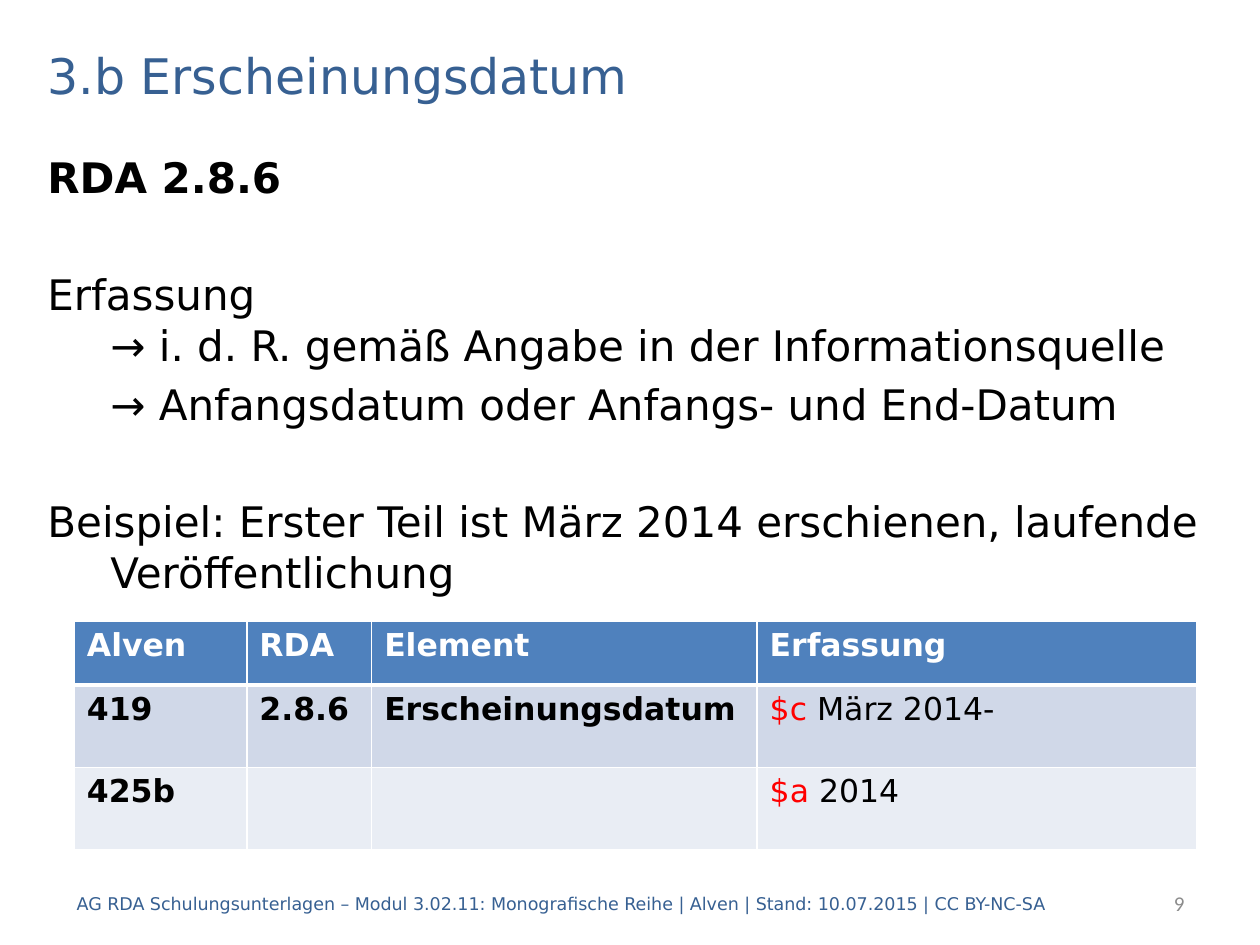
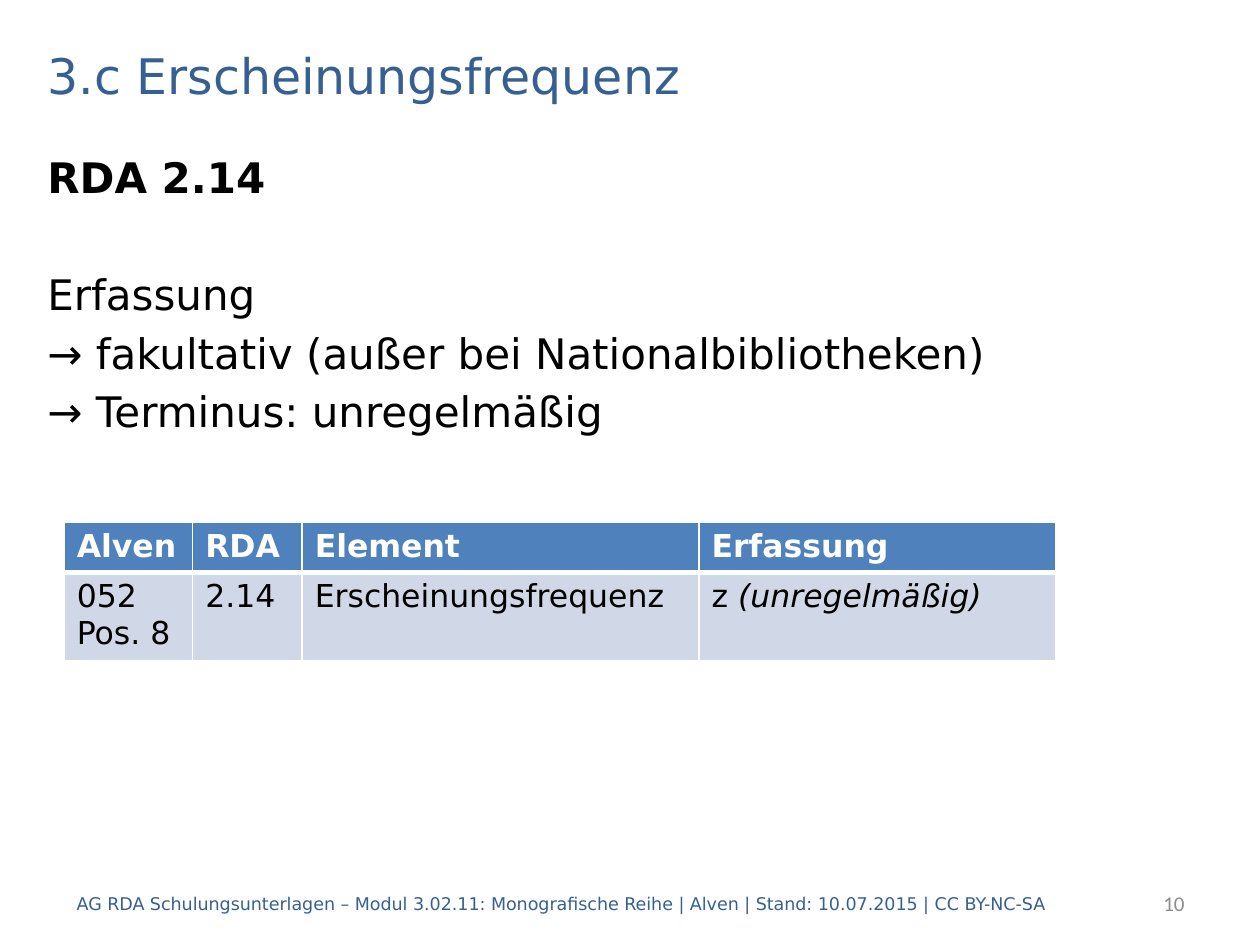
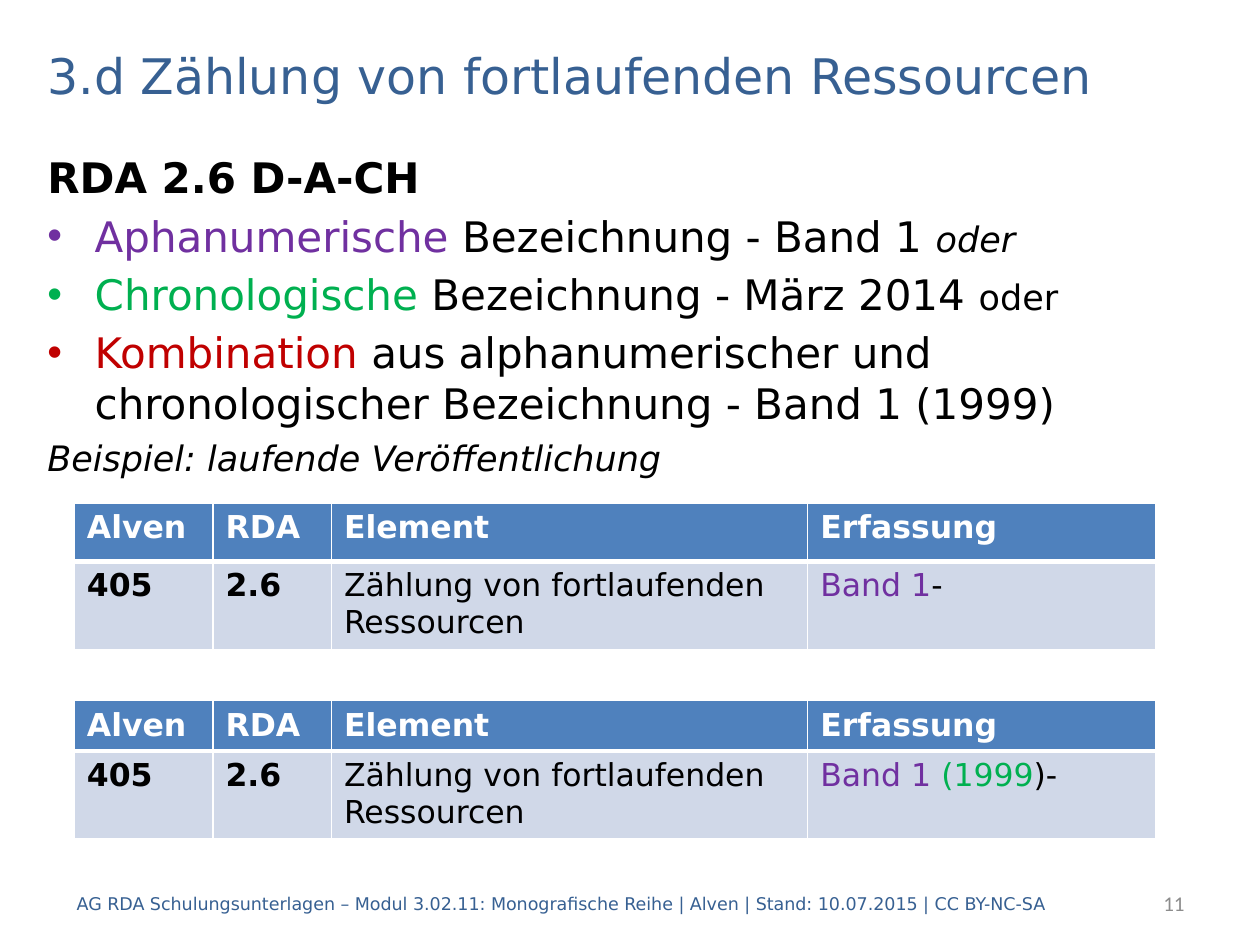
from lxml import etree
from pptx import Presentation
from pptx.dml.color import RGBColor
from pptx.enum.text import MSO_ANCHOR, PP_ALIGN
from pptx.oxml.ns import qn
from pptx.util import Pt

MIDDLE = MSO_ANCHOR.MIDDLE
LEFT, RIGHT = PP_ALIGN.LEFT, PP_ALIGN.RIGHT
TITLE_ONLY = 5

COLORS = {
    "title": "376092", "number": "8C8C8C", "black": "000000", "white": "FFFFFF",
    "header": "4F81BD", "odd_row": "D0D8E8", "even_row": "E9EDF4",
    "red": "FF0000", "dark_red": "C00000", "purple": "7030A0", "green": "00B050",
}
FONT, NUMBER_FONT = "DejaVu Sans", "Calibri"
FOOTER = ("AG RDA Schulungsunterlagen – Modul 3.02.11: Monografische Reihe | Alven | "
          "Stand: 10.07.2015 | CC BY-NC-SA")
HEADINGS = ["Alven", "RDA", "Element", "Erfassung"]

# Boxes: left, top, width, height in points
TITLE_BOX = (20, 14.4, 680.4, 57)
BODY_BOX = (20, 82.8, 680.4, 414)
FOOTER_BOX = (36.7, 501.8, 601.2, 28.8)
NUMBER_BOX = (569.5, 501.8, 114.5, 28.8)

LINE_FACTOR = 1.21
GAP = 4.4
BLOCK_GAP = 38
HANG = 36
BULLET_HANG = 27


def run(text, color="black", **style):
    return {"text": text, "color": color, **style}


def bold(text):
    return run(text, bold=True)


def add_runs(p, runs, size, font=FONT):
    """Add the runs to a paragraph; a run marked new_line starts on a new line."""
    for spec in runs:
        if spec.get("new_line"):
            p.add_line_break()
        r = p.add_run()
        r.text = spec["text"]
        f = r.font
        f.name, f.size = font, Pt(spec.get("size", size))
        f.bold, f.italic = spec.get("bold", False), spec.get("italic", False)
        f.color.rgb = RGBColor.from_string(COLORS[spec["color"]])


def place(shape, box):
    shape.left, shape.top, shape.width, shape.height = map(Pt, box)


def add_text_box(s, box):
    tf = s.shapes.add_textbox(*map(Pt, box)).text_frame
    tf.word_wrap = True
    return tf


def add_line(s, box, text, color, size, font=FONT, align=LEFT):
    tf = add_text_box(s, box)
    tf.vertical_anchor = MIDDLE
    tf.paragraphs[0].alignment = align
    add_runs(tf.paragraphs[0], [run(text, color)], size, font)


def add_base_slide(prs, title, number):
    """Add a slide with its title, footer and slide number."""
    s = prs.slides.add_slide(prs.slide_layouts[TITLE_ONLY])
    place(s.shapes.title, TITLE_BOX)
    tf = s.shapes.title.text_frame
    tf.vertical_anchor = MIDDLE
    tf.paragraphs[0].alignment = LEFT
    add_runs(tf.paragraphs[0], [run(title, "title")], 28)
    add_line(s, FOOTER_BOX, FOOTER, "title", 10)
    add_line(s, NUMBER_BOX, str(number), "number", 12, NUMBER_FONT, RIGHT)
    return s


def para(*runs, size=24, before=GAP, margin=HANG, indent=-HANG, bullet=False):
    return {"runs": runs, "size": size, "before": before,
            "margin": margin, "indent": indent, "bullet": bullet}


def bullet(*runs):
    return para(*runs, margin=BULLET_HANG, indent=-BULLET_HANG, bullet=True)


def add_body(s, paras):
    tf = add_text_box(s, BODY_BOX)
    for i, spec in enumerate(paras):
        p = tf.add_paragraph() if i else tf.paragraphs[0]
        p.line_spacing = Pt(spec["size"] * LINE_FACTOR)
        p.space_before = Pt(spec["before"] if i else 0)
        pPr = p._p.get_or_add_pPr()
        pPr.set("marL", str(Pt(spec["margin"])))
        pPr.set("indent", str(Pt(spec["indent"])))
        if spec["bullet"]:
            etree.SubElement(pPr, qn("a:buFont"), typeface="Arial")
            etree.SubElement(pPr, qn("a:buChar"), char="•")
        add_runs(p, spec["runs"], spec["size"])


def set_borders(cell, **widths):
    """Draw white cell borders; this must come before the fill."""
    tcPr = cell._tc.get_or_add_tcPr()
    for side in "LRTB":
        ln = etree.SubElement(tcPr, qn(f"a:ln{side}"), w=str(Pt(widths.get(side, 1))))
        fill = etree.SubElement(ln, qn("a:solidFill"))
        etree.SubElement(fill, qn("a:srgbClr"), val=COLORS["white"])


def add_field_table(s, left, top, widths, heights, rows):
    """Add a table with the shared headings; each cell is a list of runs."""
    header = [[run(h, "white", bold=True)] for h in HEADINGS]
    table = s.shapes.add_table(len(heights), len(widths), Pt(left), Pt(top),
                               Pt(sum(widths)), Pt(sum(heights))).table
    for column, width in zip(table.columns, widths):
        column.width = Pt(width)
    for i, cells in enumerate([header, *rows]):
        table.rows[i].height = Pt(heights[i])
        row_fill = "header" if i == 0 else "odd_row" if i % 2 else "even_row"
        edges = {0: {"B": 3}, 1: {"T": 3}}.get(i, {})
        for j, runs in enumerate(cells):
            cell = table.cell(i, j)
            set_borders(cell, **edges)
            cell.fill.solid()
            cell.fill.fore_color.rgb = RGBColor.from_string(COLORS[row_fill])
            add_runs(cell.text_frame.paragraphs[0], runs, 18)


def add_date_slide(prs):
    s = add_base_slide(prs, "3.b Erscheinungsdatum", 9)
    add_body(s, [
        para(bold("RDA 2.8.6")),
        para(run("Erfassung"),
             run("→ i. d. R. gemäß Angabe in der Informationsquelle", new_line=True),
             before=BLOCK_GAP),
        para(run("→ Anfangsdatum oder Anfangs- und End-Datum"), indent=0),
        para(run("Beispiel: Erster Teil ist März 2014 erschienen, laufende Veröffentlichung"),
             before=BLOCK_GAP),
    ])
    add_field_table(s, 42.5, 355, [98.6, 71.3, 220.3, 251.3], [36.5, 47, 47], [
        [[bold("419")], [bold("2.8.6")], [bold("Erscheinungsdatum")],
         [run("$c", "red"), run(" März 2014-")]],
        [[bold("425b")], [], [], [run("$a ", "red"), run("2014")]],
    ])


def add_frequency_slide(prs):
    s = add_base_slide(prs, "3.c Erscheinungsfrequenz", 10)
    add_body(s, [
        para(bold("RDA 2.14")),
        para(run("Erfassung"), before=BLOCK_GAP),
        para(run("→ fakultativ (außer bei Nationalbibliotheken)")),
        para(run("→ Terminus: unregelmäßig")),
    ])
    add_field_table(s, 36.7, 298.3, [73.4, 62.6, 226.8, 203.8], [27, 47], [
        [[run("052 Pos. 8")], [run("2.14")], [run("Erscheinungsfrequenz")],
         [run("z "), run("(unregelmäßig)", italic=True)]],
    ])


def add_numbering_slide(prs):
    s = add_base_slide(prs, "3.d Zählung von fortlaufenden Ressourcen", 11)
    add_body(s, [
        para(bold("RDA 2.6 D-A-CH"), margin=0, indent=0),
        bullet(run("Aphanumerische", "purple"), run(" Bezeichnung - Band 1 "),
               run("oder", size=20, italic=True)),
        bullet(run("Chronologische", "green"), run(" Bezeichnung - März 2014 "),
               run("oder", size=20)),
        bullet(run("Kombination ", "dark_red"),
               run("aus alphanumerischer und chronologischer Bezeichnung - Band 1 (1999)")),
        para(run("Beispiel: laufende Veröffentlichung", italic=True), size=20),
    ])
    examples = [
        (287.3, 33.5, [run("Band 1", "purple"), run("-")]),
        (400.3, 27, [run("Band 1 ", "purple"), run("(1999", "green"), run(")-")]),
    ]
    for top, header_height, entry in examples:
        add_field_table(s, 42.5, top, [79.2, 67.7, 272.2, 198.7], [header_height, 47], [
            [[bold("405")], [bold("2.6")],
             [run("Zählung von fortlaufenden Ressourcen")], entry],
        ])


def main():
    prs = Presentation()
    prs.slide_width, prs.slide_height = Pt(720), Pt(540)
    add_date_slide(prs)
    add_frequency_slide(prs)
    add_numbering_slide(prs)
    prs.save("out.pptx")


if __name__ == "__main__":
    main()
